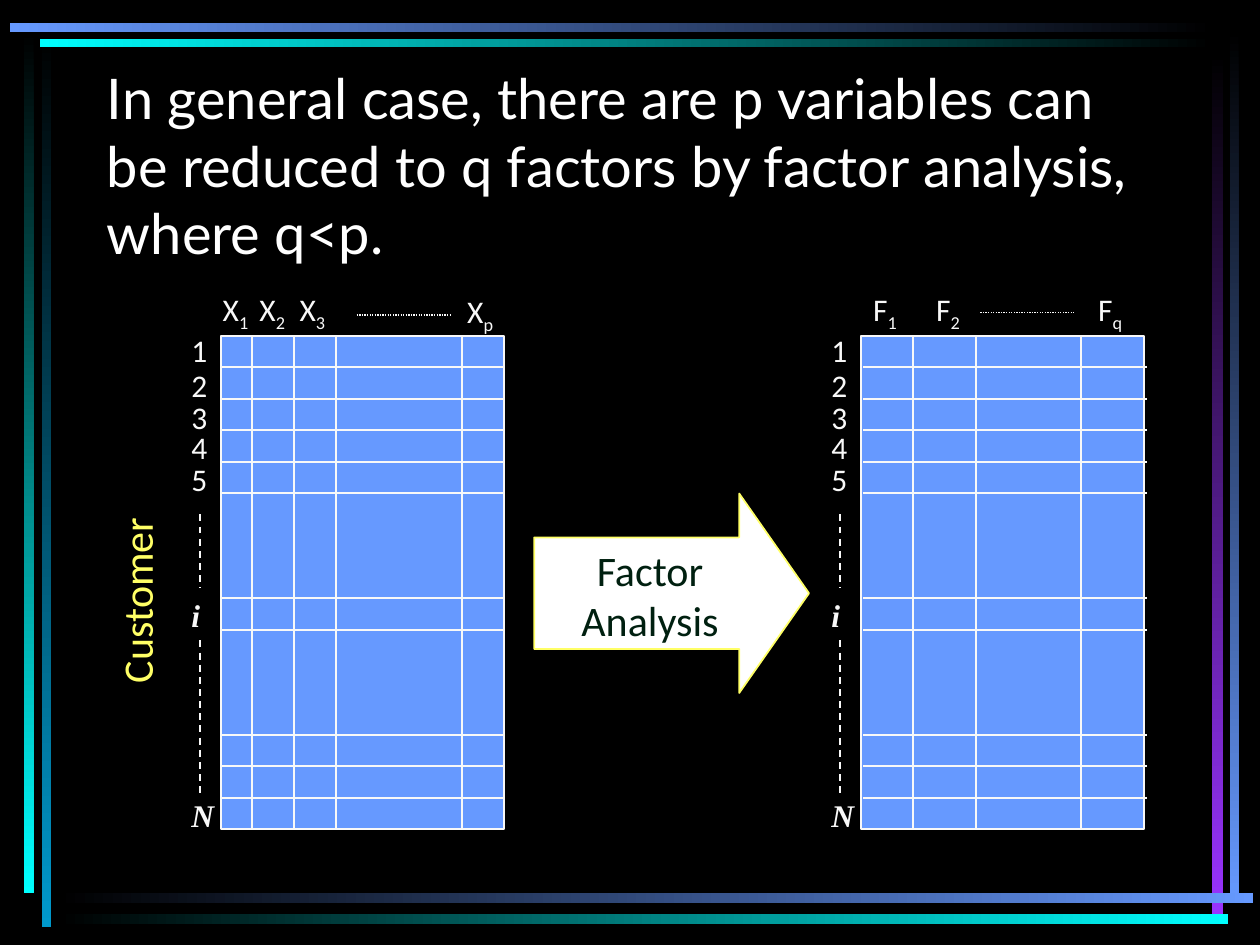
import dataclasses
import itertools

import lxml.etree
import pptx
import pptx.dml.color
import pptx.enum.dml
import pptx.enum.shapes
import pptx.enum.text
import pptx.oxml.ns
import pptx.util

Cm = pptx.util.Cm
Pt = pptx.util.Pt


@dataclasses.dataclass(frozen=True)
class Theme:
    black: str = "000000"
    white: str = "FFFFFF"
    line: str = "F8F8F8"
    blue: str = "6699FF"
    cyan: str = "00FFFF"
    ocean: str = "0099CC"
    purple: str = "9933FF"
    yellow: str = "FFFF66"
    dark_green: str = "002010"
    title_font: str = "Lato"
    body_font: str = "Calibri"
    symbol_font: str = "Times New Roman"
    title_size: int = 32
    caption_size: int = 24
    label_size: int = 18


def rgb(color):
    return pptx.dml.color.RGBColor.from_string(color)


class SlideBuilder:
    """Draws elements on one slide; every position and size is in centimetres."""

    def __init__(self, slide, theme):
        self.slide = slide
        self.theme = theme
        slide.background.fill.solid()
        slide.background.fill.fore_color.rgb = rgb(theme.black)

    def run(self, paragraph, text, size, color, font=None, slanted=False, subscript=False):
        run = paragraph.add_run()
        run.text = text
        run.font.size = Pt(size)
        run.font.name = font or self.theme.body_font
        run.font.color.rgb = rgb(color)
        if slanted:
            run.font.bold = run.font.italic = True
        if subscript:
            run._r.get_or_add_rPr().set("baseline", "-25000")

    def title(self, text, left, top, width, height):
        title = self.slide.shapes.title
        title.left, title.top, title.width, title.height = map(Cm, (left, top, width, height))
        frame = title.text_frame
        frame.auto_size = pptx.enum.text.MSO_AUTO_SIZE.NONE
        frame.vertical_anchor = pptx.enum.text.MSO_ANCHOR.BOTTOM
        paragraph = frame.paragraphs[0]
        paragraph.alignment = pptx.enum.text.PP_ALIGN.LEFT
        self.run(paragraph, text, self.theme.title_size, self.theme.white, self.theme.title_font)

    def text_box(self, left, top, width, height):
        """Add an empty wrapping text box and return its first paragraph and frame."""
        frame = self.slide.shapes.add_textbox(Cm(left), Cm(top), Cm(width), Cm(height)).text_frame
        frame.word_wrap = True
        return frame.paragraphs[0], frame

    def row_label(self, text, left, top):
        paragraph, _ = self.text_box(left, top, 1.07, 1.02)
        is_symbol = text.isalpha()
        font = self.theme.symbol_font if is_symbol else self.theme.body_font
        self.run(paragraph, text, self.theme.label_size, self.theme.line, font, is_symbol)

    def column_label(self, letter, index, left, top):
        paragraph, _ = self.text_box(left, top, 1.6, 1.02)
        self.run(paragraph, letter, self.theme.label_size, self.theme.line)
        self.run(paragraph, index, self.theme.label_size, self.theme.line, subscript=True)

    def caption(self, text, color, left, top, width, height, upward=False):
        paragraph, frame = self.text_box(left, top, width, height)
        if upward:
            frame._txBody.bodyPr.set("vert", "vert270")
        else:
            paragraph.alignment = pptx.enum.text.PP_ALIGN.CENTER
        self.run(paragraph, text, self.theme.caption_size, color)

    def shape(self, kind, left, top, width, height, fill=None, line=None):
        shape = self.slide.shapes.add_shape(kind, Cm(left), Cm(top), Cm(width), Cm(height))
        shape.shadow.inherit = False
        if fill:
            shape.fill.solid()
            shape.fill.fore_color.rgb = rgb(fill)
        if line:
            shape.line.color.rgb = rgb(line)
            shape.line.width = Pt(1)
        else:
            shape.line.fill.background()
        return shape

    def rectangle(self, *place, **style):
        return self.shape(pptx.enum.shapes.MSO_SHAPE.RECTANGLE, *place, **style)

    def gradient_bar(self, left, top, width, height, start, end):
        """Shade from start to end along the longer side."""
        fill = self.rectangle(left, top, width, height).fill
        fill.gradient()
        fill.gradient_angle = 0 if width > height else 270
        for stop, color in zip(fill.gradient_stops, (start, end)):
            stop.color.rgb = rgb(color)

    def arrow(self, left, top, width, height):
        kind = pptx.enum.shapes.MSO_SHAPE.RIGHT_ARROW
        arrow = self.shape(kind, left, top, width, height, self.theme.white, self.theme.yellow)
        arrow.adjustments[0] = 0.56
        arrow.adjustments[1] = 0.35

    def line(self, x1, y1, x2, y2, dash=None, width=1):
        connector = self.slide.shapes.add_connector(
            pptx.enum.shapes.MSO_CONNECTOR.STRAIGHT, Cm(x1), Cm(y1), Cm(x2), Cm(y2))
        connector.line.color.rgb = rgb(self.theme.line)
        connector.line.width = Pt(width)
        if dash:
            connector.line.dash_style = dash
        lxml.etree.SubElement(connector._element.spPr, pptx.oxml.ns.qn("a:effectLst"))

    def data_matrix(self, left, column_units, row_shift=0):
        """Draw a grid whose columns and rows are whole units, with its row labels."""
        unit = 2.54 / 12
        top = 6.77
        row_units = [3] * 5 + [10, 3, 10] + [3] * 3
        width, height = sum(column_units) * unit, sum(row_units) * unit
        self.rectangle(left, top, width, height, fill=self.theme.blue, line=self.theme.line)
        for offset in itertools.accumulate(column_units[:-1]):
            x = left + offset * unit
            self.line(x, top, x, top + height)
        for offset in itertools.accumulate(row_units[:-1]):
            y = top + offset * unit
            self.line(left + row_shift, y, left + row_shift + width, y)
        label_tops = (6.55, 7.26, 7.9, 8.51, 9.14, 11.89, 15.93)
        for text, label_top in zip("12345iN", label_tops):
            self.row_label(text, left - 0.84, label_top)
        for y1, y2 in ((10.37, 11.85), (12.91, 16.09)):
            self.line(left - 0.42, y1, left - 0.42, y2, pptx.enum.dml.MSO_LINE.DASH)


def main():
    theme = Theme()
    presentation = pptx.Presentation()
    presentation.slide_width, presentation.slide_height = Cm(25.4), Cm(19.05)
    builder = SlideBuilder(presentation.slides.add_slide(presentation.slide_layouts[5]), theme)

    for bar in (
        (0.84, 0.71, 0.2, 17.98, theme.black, theme.ocean),
        (0.48, 0.64, 0.2, 17.37, theme.black, theme.cyan),
        (24.79, 0.61, 0.18, 17.6, theme.black, theme.blue),
        (24.43, 1.07, 0.23, 17.35, theme.black, theme.purple),
        (1.14, 18, 24.13, 0.2, theme.black, theme.blue),
        (1.14, 18.42, 23.62, 0.2, theme.black, theme.cyan),
        (0.81, 0.79, 23.67, 0.15, theme.cyan, theme.black),
        (0.2, 0.47, 24.28, 0.18, theme.blue, theme.black),
    ):
        builder.gradient_bar(*bar)

    builder.title("In general case, there are p variables can be reduced to q factors "
                  "by factor analysis, where q<p.", 1.9, 2.74, 21.59, 2.74)

    builder.data_matrix(4.45, [3, 4, 4, 12, 4])
    builder.data_matrix(17.35, [5, 6, 10, 6], row_shift=0.05)
    for letter, index, left, top in (
        ("X", "1", 4.24, 5.72), ("X", "2", 4.98, 5.72),
        ("X", "3", 5.79, 5.72), ("X", "p", 9.17, 5.77),
        ("F", "1", 17.35, 5.72), ("F", "2", 18.62, 5.72), ("F", "q", 21.89, 5.72),
    ):
        builder.column_label(letter, index, left, top)
    for left, y in ((7.19, 6.35), (19.76, 6.3)):
        builder.line(left, y, left + 1.9, y, pptx.enum.dml.MSO_LINE.ROUND_DOT, 0.75)

    builder.caption("Customer", theme.yellow, 2.11, 8.69, 1.52, 5.33, upward=True)
    builder.arrow(10.77, 9.95, 5.54, 4.02)
    builder.caption("Factor Analysis", theme.dark_green, 10.77, 10.85, 4.67, 2.29)

    presentation.save("out.pptx")


if __name__ == "__main__":
    main()
